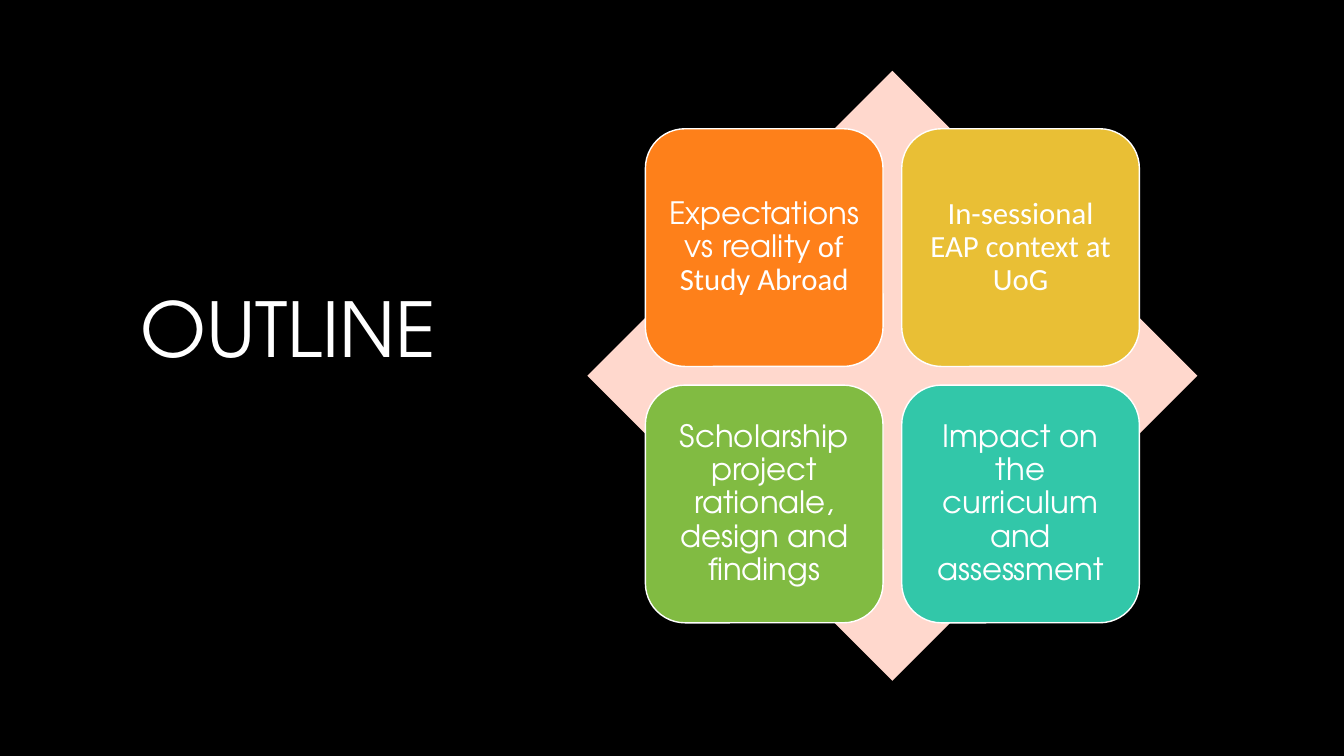
from pptx import Presentation
from pptx import util as u
from pptx.dml import color
from pptx.enum import shapes, text

DISPLAY, PLAIN = "TeX Gyre Adventor", "Calibri"
WHITE = "FFFFFF"


def rgb(value):
    return color.RGBColor.from_string(value)


class Deck:
    """Holds the presentation, its current slide and the shared style."""

    def __init__(self, background):
        self.prs = Presentation()
        self.prs.slide_width = u.Cm(33.87)
        self.prs.slide_height = u.Cm(19.05)
        self.s = self.prs.slides.add_slide(self.prs.slide_layouts[5])
        fill = self.s.background.fill
        fill.solid()
        fill.fore_color.rgb = rgb(background)

    def set_text(self, tf, parts, size, align):
        """Fill one paragraph with (words, font) runs."""
        tf.word_wrap = True
        tf.auto_size = text.MSO_AUTO_SIZE.NONE
        tf.vertical_anchor = text.MSO_ANCHOR.MIDDLE
        p = tf.paragraphs[0]
        p.alignment, p.line_spacing = align, 0.9
        for words, font in parts:
            r = p.add_run()
            r.text = words
            r.font.name, r.font.size = font, u.Pt(size)
            r.font.color.rgb = rgb(WHITE)

    def title(self, words, left, top, width, height, raise_by):
        sp = self.s.shapes.title
        sp.left, sp.top = u.Cm(left), u.Cm(top)
        sp.width, sp.height = u.Cm(width), u.Cm(height)
        sp.text_frame.margin_bottom = u.Cm(raise_by)
        self.set_text(sp.text_frame, [(words, DISPLAY)], 54,
                      text.PP_ALIGN.RIGHT)

    def shape(self, kind, center_x, center_y, size, fill):
        """Add a square-framed shape around its centre."""
        sp = self.s.shapes.add_shape(
            kind, u.Cm(center_x - size / 2), u.Cm(center_y - size / 2),
            u.Cm(size), u.Cm(size))
        sp.shadow.inherit = False
        sp.fill.solid()
        sp.fill.fore_color.rgb = rgb(fill)
        sp.line.fill.background()
        return sp

    def card(self, center_x, center_y, size, fill, parts):
        sp = self.shape(shapes.MSO_SHAPE.ROUNDED_RECTANGLE,
                        center_x, center_y, size, fill)
        sp.line.color.rgb = rgb(WHITE)
        sp.line.width = u.Pt(1)
        tf = sp.text_frame
        tf.margin_left = tf.margin_right = u.Cm(0.23)
        tf.margin_top = tf.margin_bottom = u.Cm(0.23)
        self.set_text(tf, parts, 22, text.PP_ALIGN.CENTER)


def main():
    deck = Deck("000000")

    # Title
    deck.title("OUTLINE", 1.75, 1.78, 9.5, 15.52, raise_by=2.44)

    # Diamond behind the cards
    center_x, center_y = 22.49, 9.47
    deck.shape(shapes.MSO_SHAPE.DIAMOND, center_x, center_y, 15.37, "FFD8CD")

    # Two by two cards around the diamond's centre
    cards = [
        ("FE801A", [("Expectations vs reality", DISPLAY),
                    (" of Study Abroad", PLAIN)]),
        ("E9BF35", [("In-sessional EAP context at UoG", PLAIN)]),
        ("81BB42", [("Scholarship project rationale, design and findings",
                     DISPLAY)]),
        ("32C7A9", [("Impact on the curriculum and assessment", DISPLAY)]),
    ]
    pitch = 6.46
    for i, (fill, parts) in enumerate(cards):
        row, col = divmod(i, 2)
        deck.card(center_x + (col - 0.5) * pitch,
                  center_y + (row - 0.5) * pitch, 5.99, fill, parts)

    deck.prs.save("out.pptx")


if __name__ == "__main__":
    main()
